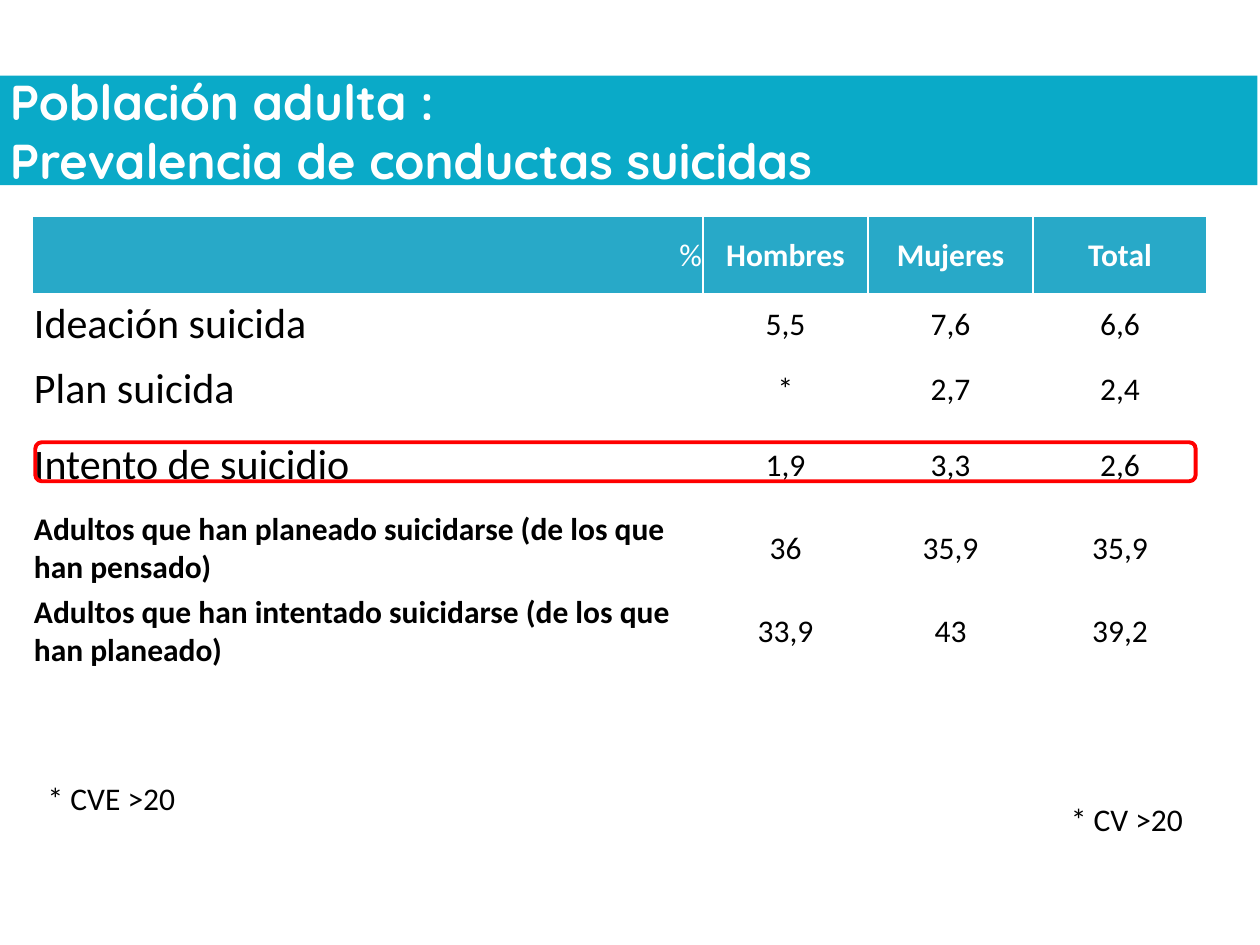
from pptx import Presentation
from pptx.dml.color import RGBColor
from pptx.enum.shapes import MSO_SHAPE
from pptx.enum.text import MSO_ANCHOR, PP_ALIGN
from pptx.util import Inches, Pt

RECT, ROUNDED = MSO_SHAPE.RECTANGLE, MSO_SHAPE.ROUNDED_RECTANGLE
MIDDLE = MSO_ANCHOR.MIDDLE
LEFT, CENTER, RIGHT = PP_ALIGN.LEFT, PP_ALIGN.CENTER, PP_ALIGN.RIGHT

WHITE = RGBColor(0xFF, 0xFF, 0xFF)
BLACK = RGBColor(0x00, 0x00, 0x00)
RED = RGBColor(0xFF, 0x00, 0x00)
BANNER_BLUE = RGBColor(0x0A, 0xAA, 0xC8)
HEADER_BLUE = RGBColor(0x28, 0xA9, 0xC8)


class SlideBuilder:
    body_font = "Calibri"
    title_font = "Quicksand"
    body_size = 18

    def __init__(self, slide):
        self.slide = slide

    def run(self, paragraph, text, size=body_size, color=BLACK, bold=False, font=body_font):
        run = paragraph.add_run()
        run.text = text
        run.font.name = font
        run.font.size = Pt(size)
        run.font.bold = bold
        run.font.color.rgb = color

    def shape(self, kind, left, top, width, height):
        shape = self.slide.shapes.add_shape(
            kind, Inches(left), Inches(top), Inches(width), Inches(height))
        shape.shadow.inherit = False
        return shape

    def title(self, lines, left, top, width, height):
        banner = self.shape(RECT, left, top, width, height)
        banner.fill.solid()
        banner.fill.fore_color.rgb = BANNER_BLUE
        banner.line.fill.background()
        frame = banner.text_frame
        frame.word_wrap = True
        frame.vertical_anchor = MIDDLE
        paragraph = frame.paragraphs[0]
        paragraph.alignment = LEFT
        for index, line in enumerate(lines):
            if index:
                paragraph.add_line_break()
            self.run(paragraph, line, 28, WHITE, True, self.title_font)

    def highlight(self, left, top, width, height):
        outline = self.shape(ROUNDED, left, top, width, height)
        outline.fill.background()
        outline.line.color.rgb = RED
        outline.line.width = Pt(2.25)

    def note(self, text, left, top, width, height=0.4):
        box = self.slide.shapes.add_textbox(
            Inches(left), Inches(top), Inches(width), Inches(height))
        box.text_frame.word_wrap = True
        self.run(box.text_frame.paragraphs[0], text)

    def cell(self, cell, text, align, fill=None, **style):
        cell.margin_left = cell.margin_right = cell.margin_top = Inches(0.01)
        cell.margin_bottom = 0
        cell.vertical_anchor = MIDDLE
        if fill is None:
            cell.fill.background()
        else:
            cell.fill.solid()
            cell.fill.fore_color.rgb = fill
        paragraph = cell.text_frame.paragraphs[0]
        paragraph.alignment = align
        self.run(paragraph, text, **style)

    def table(self, header, rows, left, top, widths, heights):
        table = self.slide.shapes.add_table(
            len(heights), len(widths), Inches(left), Inches(top),
            Inches(sum(widths)), Inches(sum(heights))).table
        table.horz_banding = False
        for column, width in zip(table.columns, widths):
            column.width = Inches(width)
        for row, height in zip(table.rows, heights):
            row.height = Inches(height)

        for col, text in enumerate(header):
            self.cell(table.cell(0, col), text, CENTER if col else RIGHT,
                      HEADER_BLUE, color=WHITE, bold=col > 0)
        for row, (label, size, bold, values) in enumerate(rows, start=1):
            self.cell(table.cell(row, 0), label, LEFT, size=size, bold=bold)
            for col, value in enumerate(values, start=1):
                self.cell(table.cell(row, col), value, CENTER)


def main():
    deck = Presentation()
    deck.slide_width, deck.slide_height = Inches(10), Inches(7.5)
    builder = SlideBuilder(deck.slides.add_slide(deck.slide_layouts[6]))

    # Prevalence table: label, label size, bold label, values by sex
    header = ["%", "Hombres", "Mujeres", "Total"]
    prevalence = [
        ("Ideación suicida", 24, False, ["5,5", "7,6", "6,6"]),
        ("Plan suicida", 24, False, ["*", "2,7", "2,4"]),
        ("Intento de suicidio", 24, False, ["1,9", "3,3", "2,6"]),
        ("Adultos que han planeado suicidarse (de los que han pensado)",
         18, True, ["36", "35,9", "35,9"]),
        ("Adultos que han intentado suicidarse (de los que han planeado)",
         18, True, ["33,9", "43", "39,2"]),
    ]
    builder.table(header, prevalence, 0.26, 1.72,
                  widths=[5.32, 1.31, 1.31, 1.38],
                  heights=[0.61, 0.48, 0.55, 0.66, 0.66, 0.66])

    # Title banner
    builder.title(["Población adulta :", "Prevalencia de conductas suicidas"],
                  -0.02, 0.6, 10, 0.87)

    # Footnotes
    builder.note("* CV >20", 8.4, 6.3, 1.1)
    builder.note("* CVE >20", 0.28, 6.13, 1.5)

    # Frame around the suicide attempt row
    builder.highlight(0.28, 3.51, 9.21, 0.31)

    deck.save("out.pptx")


if __name__ == "__main__":
    main()
